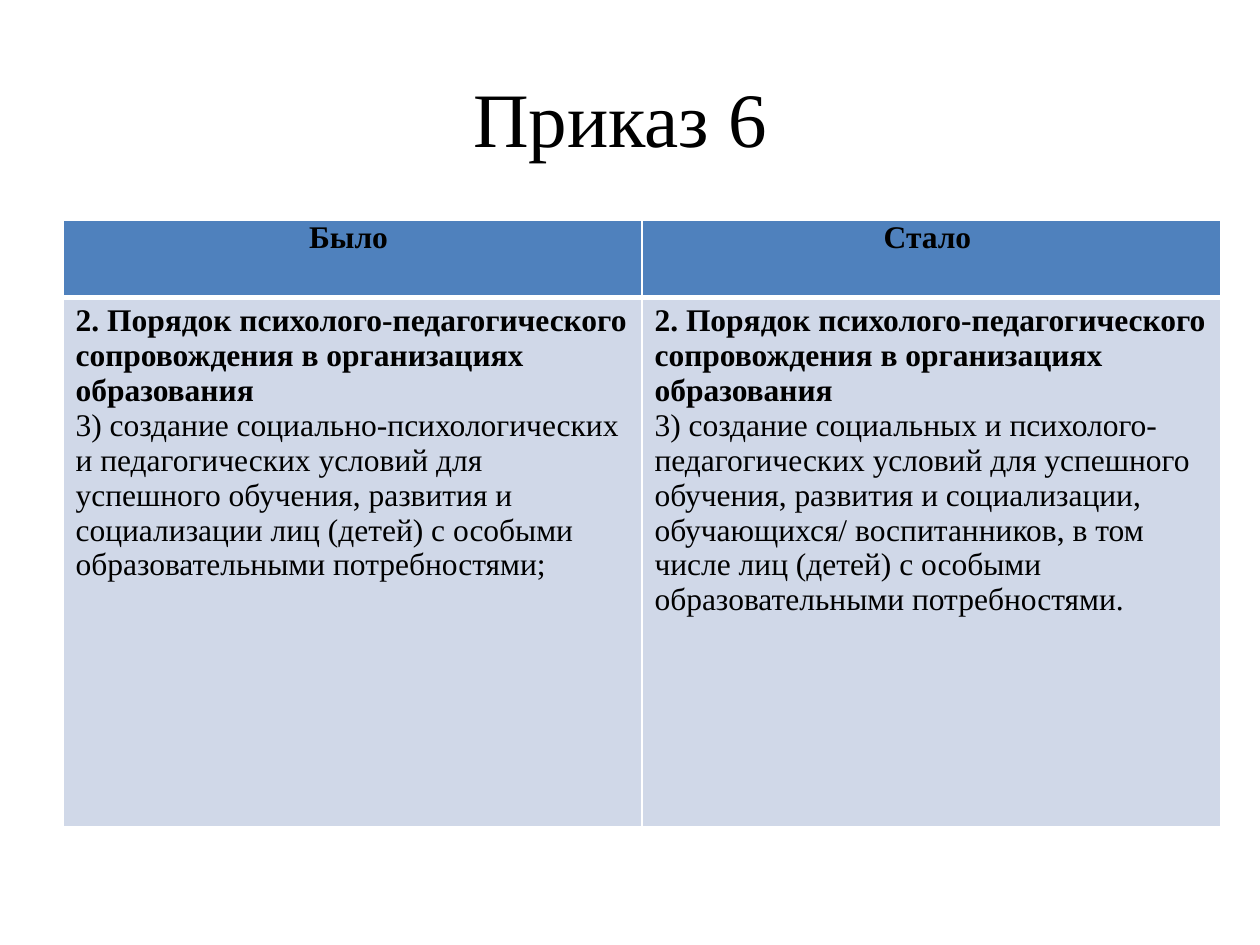
from dataclasses import dataclass

from lxml import etree
from pptx import Presentation
from pptx import util as u
from pptx.dml.color import RGBColor
from pptx.enum import text
from pptx.oxml import ns


@dataclass(frozen=True)
class Theme:
    font: str = "Times New Roman"
    ink: str = "000000"
    header: str = "4F81BD"
    body: str = "D0D8E8"
    border: str = "FFFFFF"
    title_size: float = 44
    text_size: float = 18
    thin: float = 1
    thick: float = 3


@dataclass(frozen=True)
class Column:
    heading: str
    clause: str
    wording: str


THEME = Theme()
WIDTH, HEIGHT = u.Inches(10), u.Inches(7.5)
CLAUSE = "2. Порядок психолого-педагогического сопровождения в организациях образования"
COLUMNS = [
    Column(
        "Было ",
        CLAUSE,
        "3) создание социально-психологических и педагогических условий для "
        "успешного обучения, развития и социализации лиц (детей) с особыми "
        "образовательными потребностями;",
    ),
    Column(
        "Стало ",
        CLAUSE,
        "3) создание социальных и психолого-педагогических условий для успешного "
        "обучения, развития и социализации, обучающихся/ воспитанников, в том "
        "числе лиц (детей) с особыми образовательными потребностями.",
    ),
]


def write(p, content: str, size: float, bold: bool = False, centred: bool = False) -> None:
    p.text = content
    p.font.name = THEME.font
    p.font.size = u.Pt(size)
    p.font.bold = bold
    p.font.color.rgb = RGBColor.from_string(THEME.ink)
    p.alignment = text.PP_ALIGN.CENTER if centred else text.PP_ALIGN.LEFT


def style_cell(cell, fill: str, top: float, bottom: float) -> None:
    tcPr = cell._tc.get_or_add_tcPr()
    edges = {"lnL": THEME.thin, "lnR": THEME.thin, "lnT": top, "lnB": bottom}
    for tag, width in edges.items():
        ln = etree.SubElement(tcPr, ns.qn(f"a:{tag}"), w=str(u.Pt(width)))
        solid = etree.SubElement(ln, ns.qn("a:solidFill"))
        etree.SubElement(solid, ns.qn("a:srgbClr"), val=THEME.border)
    cell.fill.solid()
    cell.fill.fore_color.rgb = RGBColor.from_string(fill)


def add_title(slide, content: str) -> None:
    sp = slide.shapes.add_textbox(
        int(WIDTH * 0.05), int(HEIGHT * 0.04), int(WIDTH * 0.9), int(HEIGHT / 6)
    )
    tf = sp.text_frame
    tf.word_wrap = True
    tf.vertical_anchor = text.MSO_ANCHOR.MIDDLE
    write(tf.paragraphs[0], content, THEME.title_size, centred=True)


def fill_column(header, body, column: Column) -> None:
    style_cell(header, THEME.header, THEME.thin, THEME.thick)
    header.margin_left = header.margin_right = u.Inches(0.07)
    header.margin_top = header.margin_bottom = 0
    write(header.text_frame.paragraphs[0], column.heading, THEME.text_size, True, True)

    style_cell(body, THEME.body, THEME.thick, THEME.thin)
    tf = body.text_frame
    write(tf.paragraphs[0], column.clause, THEME.text_size, bold=True)
    write(tf.add_paragraph(), column.wording, THEME.text_size)


def add_comparison(slide, columns: list[Column]) -> None:
    row_heights = u.Inches(0.61), u.Inches(4.2)
    table = slide.shapes.add_table(
        len(row_heights), len(columns),
        int(WIDTH * 0.05), u.Inches(1.75), int(WIDTH * 0.919), sum(row_heights),
    ).table
    for row, height in zip(table.rows, row_heights):
        row.height = height
    for i, column in enumerate(columns):
        fill_column(table.cell(0, i), table.cell(1, i), column)


def main() -> None:
    prs = Presentation()
    prs.slide_width, prs.slide_height = WIDTH, HEIGHT
    s = prs.slides.add_slide(prs.slide_layouts[6])
    add_title(s, "Приказ 6 ")
    add_comparison(s, COLUMNS)
    prs.save("out.pptx")


if __name__ == "__main__":
    main()
